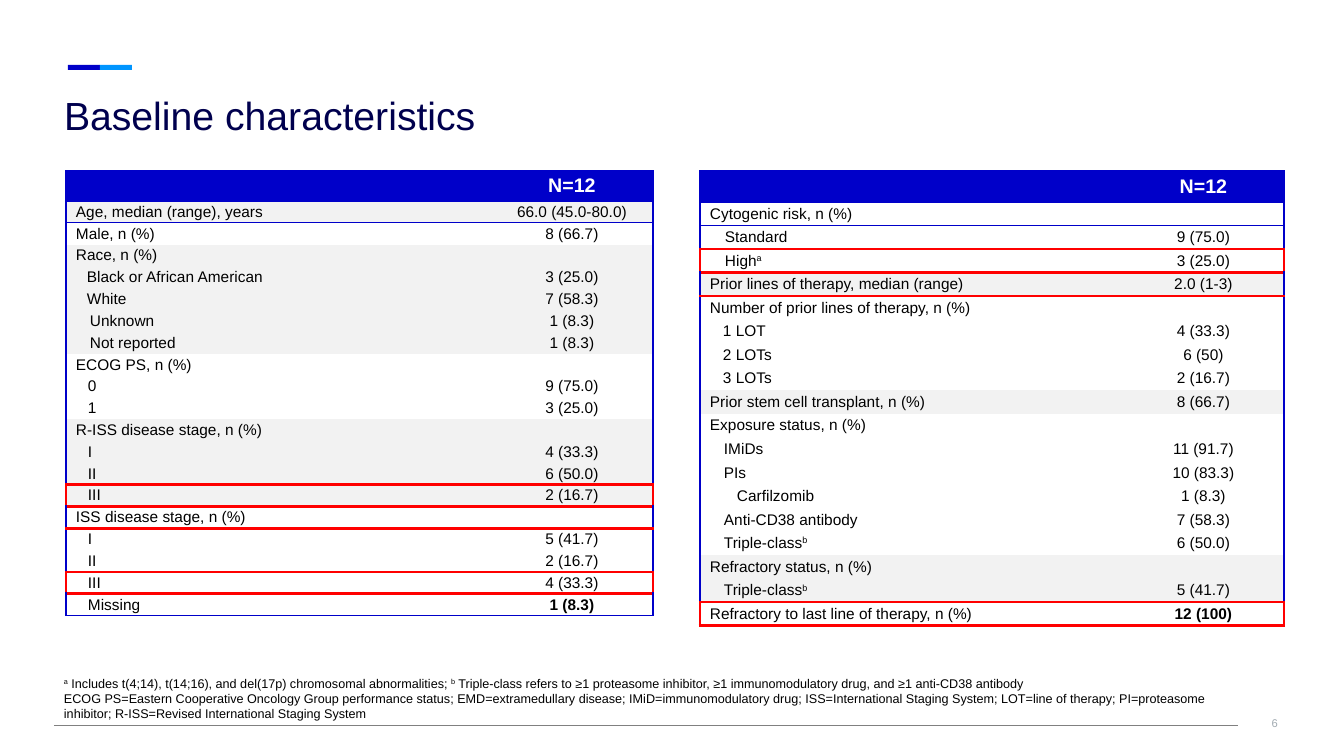
from lxml.etree import SubElement
from pptx import Presentation
from pptx.dml.color import RGBColor
from pptx.enum.shapes import MSO_CONNECTOR as Connector, MSO_SHAPE as Shape
from pptx.enum.text import MSO_ANCHOR as Anchor, PP_ALIGN as Align
from pptx.oxml import parse_xml
from pptx.oxml.ns import nsdecls, qn
from pptx.util import Pt

SCALE = 914400 / 100.8  # EMU per px
BLUE, SKY, NAVY, RED = "0000C9", "0095FF", "00004E", "FF0000"
GREY, WHITE, BLACK = "F2F2F2", "FFFFFF", "000000"
NO_GRID_STYLE = "{2D5ABB26-0587-4C30-8999-92F81FD0307C}"

# Text between carets is superscript.
TITLE = "Baseline characteristics"
FOOTNOTES = [
    "^a^ Includes t(4;14), t(14;16), and del(17p) chromosomal abnormalities; "
    "^b^ Triple-class refers to ≥1 proteasome inhibitor, ≥1 immunomodulatory drug, "
    "and ≥1 anti-CD38 antibody",
    "ECOG PS=Eastern Cooperative Oncology Group performance status; EMD=extramedullary disease; "
    "IMiD=immunomodulatory drug; ISS=International Staging System; LOT=line of therapy; "
    "PI=proteasome inhibitor; R-ISS=Revised International Staging System",
]
HEADER = ("", 10, "N=12")

# Blocks of rows: fill, then (label, left indent in px, value)
PATIENT_BLOCKS = [
    (GREY, [("Age, median (range), years", 10, "66.0 (45.0-80.0)")]),
    (WHITE, [("Male, n (%)", 10, "8 (66.7)")]),
    (GREY, [("Race, n (%)", 10, ""),
            ("Black or African American", 21, "3 (25.0)"),
            ("White", 21, "7 (58.3)"),
            ("Unknown", 24, "1 (8.3)"),
            ("Not reported", 24, "1 (8.3)")]),
    (WHITE, [("ECOG PS, n (%)", 10, ""),
             ("0", 22, "9 (75.0)"),
             ("1", 22, "3 (25.0)")]),
    (GREY, [("R-ISS disease stage, n (%)", 10, ""),
            ("I", 22, "4 (33.3)"),
            ("II", 22, "6 (50.0)"),
            ("III", 22, "2 (16.7)")]),
    (WHITE, [("ISS disease stage, n (%)", 10, ""),
             ("I", 22, "5 (41.7)"),
             ("II", 22, "2 (16.7)"),
             ("III", 22, "4 (33.3)"),
             ("Missing", 22, "1 (8.3)")]),
]
THERAPY_BLOCKS = [
    (WHITE, [("Cytogenic risk, n (%)", 10, ""),
             ("Standard", 25, "9 (75.0)"),
             ("High^a", 25, "3 (25.0)")]),
    (GREY, [("Prior lines of therapy, median (range)", 10, "2.0 (1-3)")]),
    (WHITE, [("Number of prior lines of therapy, n (%)", 10, ""),
             ("1 LOT", 23, "4 (33.3)"),
             ("2 LOTs", 23, "6 (50)"),
             ("3 LOTs", 23, "2 (16.7)")]),
    (GREY, [("Prior stem cell transplant, n (%)", 10, "8 (66.7)")]),
    (WHITE, [("Exposure status, n (%)", 10, ""),
             ("IMiDs", 24, "11 (91.7)"),
             ("PIs", 24, "10 (83.3)"),
             ("Carfilzomib", 37, "1 (8.3)"),
             ("Anti-CD38 antibody", 24, "7 (58.3)"),
             ("Triple-class^b", 24, "6 (50.0)")]),
    (GREY, [("Refractory status, n (%)", 10, ""),
            ("Triple-class^b", 24, "5 (41.7)")]),
    (WHITE, [("Refractory to last line of therapy, n (%)", 10, "12 (100)")]),
]
# left, column widths, header height, body height, highlighted rows, blocks
TABLES = [
    (66, (425, 162), 30, 415, {14, 18}, PATIENT_BLOCKS),
    (700, (423, 161), 31, 424, {3, 18}, THERAPY_BLOCKS),
]
TABLE_TOP = 171


def px(length):
    return round(length * SCALE)


def rgb(color):
    return RGBColor.from_string(color)


def write(paragraph, text, size, color, bold=False, align=Align.LEFT):
    paragraph.alignment = align
    for index, piece in enumerate(text.split("^")):
        if not piece:
            continue
        run = paragraph.add_run()
        run.text = piece
        formats = {"size": Pt(size), "name": "Arial", "bold": bold}
        for name, value in formats.items():
            setattr(run.font, name, value)
        run.font.color.rgb = rgb(color)
        if index % 2:
            run._r.get_or_add_rPr().set("baseline", "30000")
    if not text:  # keeps an empty row from growing
        paragraph._p.get_or_add_endParaRPr().set("sz", str(size * 100))


def add_text(slide, box, texts, size, color, inset, anchor=Anchor.TOP, align=Align.LEFT):
    frame = slide.shapes.add_textbox(*map(px, box)).text_frame
    horizontal, vertical = map(px, inset)
    formats = {"word_wrap": True, "vertical_anchor": anchor,
               "margin_left": horizontal, "margin_right": horizontal,
               "margin_top": vertical, "margin_bottom": vertical}
    for name, value in formats.items():
        setattr(frame, name, value)
    for index, text in enumerate(texts):
        paragraph = frame.add_paragraph() if index else frame.paragraphs[0]
        write(paragraph, text, size, color, align=align)


def set_borders(cell, borders):
    """Draw the given sides; borders maps L, R, T, B to colours, in that order."""
    properties = cell._tc.get_or_add_tcPr()
    for index, (side, color) in enumerate(borders.items()):
        width = Pt(2.25 if color == RED else 1)
        properties.insert(index, parse_xml(
            f'<a:ln{side} {nsdecls("a")} w="{width}"><a:solidFill>'
            f'<a:srgbClr val="{color}"/></a:solidFill></a:ln{side}>'))


def row_borders(row, column, last_row, highlighted):
    side_color = RED if row in highlighted else BLUE
    borders = {"R" if column else "L": side_color}
    for side, neighbour, at_edge in (("T", row - 1, row <= 1), ("B", row + 1, row in (0, last_row))):
        if highlighted & {row, neighbour}:
            borders[side] = RED
        elif at_edge:
            borders[side] = BLUE
    return borders


def add_characteristics(slide, left, widths, header_height, body_height, highlighted, blocks):
    rows = [(BLUE, HEADER)] + [(fill, row) for fill, block in blocks for row in block]
    last_row = len(rows) - 1
    frame = slide.shapes.add_table(len(rows), 2, px(left), px(TABLE_TOP), px(sum(widths)),
                                   px(header_height + body_height))
    table = frame.table
    table.first_row = table.horz_banding = False
    table._tbl.tblPr.find(qn("a:tableStyleId")).text = NO_GRID_STYLE
    for column, width in zip(table.columns, widths):
        column.width = px(width)
    for index, (fill, (label, indent, value)) in enumerate(rows):
        table.rows[index].height = px(body_height / last_row if index else header_height)
        size, color = (11, BLACK) if index else (14, WHITE)
        value_bold = index in (0, last_row)
        contents = [(label, indent, False, Align.LEFT), (value, 10, value_bold, Align.CENTER)]
        for column, (text, margin, bold, align) in enumerate(contents):
            cell = table.cell(index, column)
            formats = {"margin_left": px(margin), "margin_right": px(10 * column),
                       "margin_top": px(1), "margin_bottom": px(1),
                       "vertical_anchor": Anchor.MIDDLE}
            for name, setting in formats.items():
                setattr(cell, name, setting)
            cell.fill.solid()
            cell.fill.fore_color.rgb = rgb(fill)
            write(cell.text_frame.paragraphs[0], text, size, color, bold, align)
            set_borders(cell, row_borders(index, column, last_row, highlighted))


def main():
    presentation = Presentation()
    presentation.slide_width, presentation.slide_height = px(1344), px(756)
    slide = presentation.slides.add_slide(presentation.slide_layouts[6])

    for index, color in enumerate((BLUE, SKY)):
        bar = slide.shapes.add_shape(Shape.RECTANGLE, px(68 + 32 * index), px(65), px(32), px(5))
        bar.shadow.inherit = False
        bar.fill.solid()
        bar.fill.fore_color.rgb = rgb(color)
        bar.line.fill.background()

    rule = slide.shapes.add_connector(Connector.STRAIGHT, px(54), px(725), px(1238), px(725))
    rule.line.color.rgb = rgb("808080")
    rule.line.width = Pt(0.5)
    SubElement(rule._element.spPr, qn("a:effectLst"))

    add_text(slide, (1211, 695, 80, 57), ["6"], 8, "A1AAB1", (13, 13), Anchor.MIDDLE, Align.RIGHT)
    add_text(slide, (54, 81, 1159, 67), [TITLE], 28, NAVY, (10, 10))
    add_text(slide, (54, 670, 1205, 56), FOOTNOTES, 9, BLACK, (10, 5), Anchor.BOTTOM)
    for table in TABLES:
        add_characteristics(slide, *table)
    presentation.save("out.pptx")


if __name__ == "__main__":
    main()
